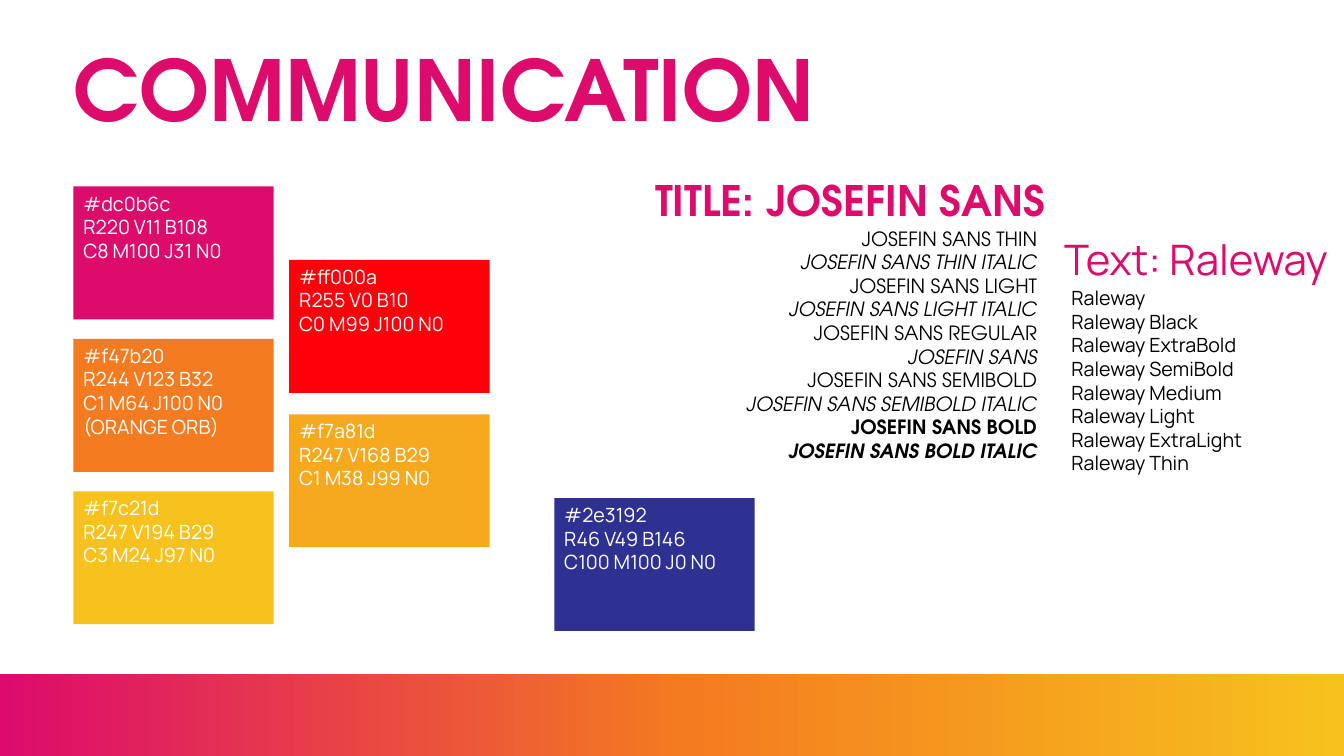
"""Builds the communication slide with its colour swatches and typefaces."""
from copy import deepcopy

from pptx import Presentation
from pptx.dml.color import RGBColor
from pptx.enum.shapes import MSO_SHAPE
from pptx.enum.text import MSO_ANCHOR, PP_ALIGN
from pptx.oxml.ns import qn
from pptx.util import Cm, Pt

PINK = RGBColor(0xDC, 0x0B, 0x6C)
RED = RGBColor(0xFF, 0x00, 0x0A)
ORANGE = RGBColor(0xF4, 0x7B, 0x20)
AMBER = RGBColor(0xF7, 0xA9, 0x1D)
YELLOW = RGBColor(0xF7, 0xC2, 0x1D)
BLUE = RGBColor(0x2E, 0x31, 0x92)
WHITE = RGBColor(0xFF, 0xFF, 0xFF)
BLACK = RGBColor(0x00, 0x00, 0x00)
HEADING_FONT = "TeX Gyre Adventor"
BODY_FONT = "Manrope"


def write(shape, lines, font, size, color, align=PP_ALIGN.LEFT, bold=False):
    frame = shape.text_frame
    frame.text = "\n".join(lines)
    frame.word_wrap = True
    frame.vertical_anchor = MSO_ANCHOR.TOP
    for paragraph in frame.paragraphs:
        paragraph.alignment = align
        paragraph.space_before = Pt(0)
        for run in paragraph.runs:
            run.font.name = font
            run.font.size = Pt(size)
            run.font.color.rgb = color
            run.font.bold = bold


def add_block(left, top, width, height):
    block = slide.shapes.add_shape(
        MSO_SHAPE.RECTANGLE, Cm(left), Cm(top), Cm(width), Cm(height))
    block.shadow.inherit = False
    block.line.fill.background()
    return block


deck = Presentation()
deck.slide_width, deck.slide_height = Cm(33.87), Cm(19.05)
slide = deck.slides.add_slide(deck.slide_layouts[5])

heading = slide.shapes.title
heading.left, heading.top = Cm(1.6), Cm(0.81)
heading.width, heading.height = Cm(31.57), Cm(5.18)
write(heading, ["COMMUNICATION"], HEADING_FONT, 60, PINK, bold=True)

left_column, middle_column, right_column = 1.85, 7.29, 13.97
swatches = [
    (left_column, 4.7, PINK, ["#dc0b6c", "R220 V11 B108", "C8 M100 J31 N0"]),
    (middle_column, 6.55, RED, ["#ff000a", "R255 V0 B10", "C0 M99 J100 N0"]),
    (left_column, 8.54, ORANGE,
     ["#f47b20", "R244 V123 B32", "C1 M64 J100 N0", "(ORANGE ORB)"]),
    (middle_column, 10.44, AMBER, ["#f7a81d", "R247 V168 B29", "C1 M38 J99 N0"]),
    (left_column, 12.38, YELLOW, ["#f7c21d", "R247 V194 B29", "C3 M24 J97 N0"]),
    (right_column, 12.55, BLUE, ["#2e3192", "R46 V49 B146", "C100 M100 J0 N0"]),
]
for left, top, color, codes in swatches:
    swatch = add_block(left, top, 5.05, 3.35)
    swatch.fill.solid()
    swatch.fill.fore_color.rgb = color
    write(swatch, codes, BODY_FONT, 14, WHITE)

text_font = slide.shapes.add_textbox(Cm(26.57), Cm(5.77), Cm(14.58), Cm(1.96))
write(text_font, ["Text: Raleway"], BODY_FONT, 30, PINK)

text_weights = slide.shapes.add_textbox(Cm(26.75), Cm(7.09), Cm(8.43), Cm(8.64))
write(text_weights,
      ["Raleway", "Raleway Black", "Raleway ExtraBold", "Raleway SemiBold",
       "Raleway Medium", "Raleway Light", "Raleway ExtraLight", "Raleway Thin"],
      BODY_FONT, 14, BLACK)

title_weights = slide.shapes.add_textbox(Cm(13.77), Cm(5.59), Cm(12.62), Cm(6.3))
write(title_weights,
      ["JOSEFIN SANS THIN", "JOSEFIN SANS THIN ITALIC",
       "JOSEFIN SANS LIGHT", "JOSEFIN SANS LIGHT ITALIC",
       "JOSEFIN SANS REGULAR", "JOSEFIN SANS",
       "JOSEFIN SANS SEMIBOLD", "JOSEFIN SANS SEMIBOLD ITALIC",
       "JOSEFIN SANS BOLD", "JOSEFIN SANS BOLD ITALIC"],
      HEADING_FONT, 14, BLACK, PP_ALIGN.RIGHT)
for index, weight in enumerate(title_weights.text_frame.paragraphs):
    weight.runs[0].font.italic = index % 2 == 1
    weight.runs[0].font.bold = index >= 8

title_font = slide.shapes.add_textbox(Cm(8.64), Cm(4.27), Cm(17.95), Cm(2.13))
write(title_font, ["TITLE: JOSEFIN SANS"], HEADING_FONT, 30, PINK,
      PP_ALIGN.RIGHT, bold=True)

footer_band = add_block(0, 16.99, 33.87, 2.06)
footer_band.fill.gradient()
footer_band.fill.gradient_angle = 0
stop_list = footer_band._element.spPr.find(qn("a:gradFill")).find(qn("a:gsLst"))
stop_list.insert(1, deepcopy(stop_list[0]))
band_colors = [(0, PINK), (0.51, ORANGE), (1, YELLOW)]
for stop, (position, color) in zip(footer_band.fill.gradient_stops, band_colors):
    stop.position = position
    stop.color.rgb = color

deck.save("out.pptx")
